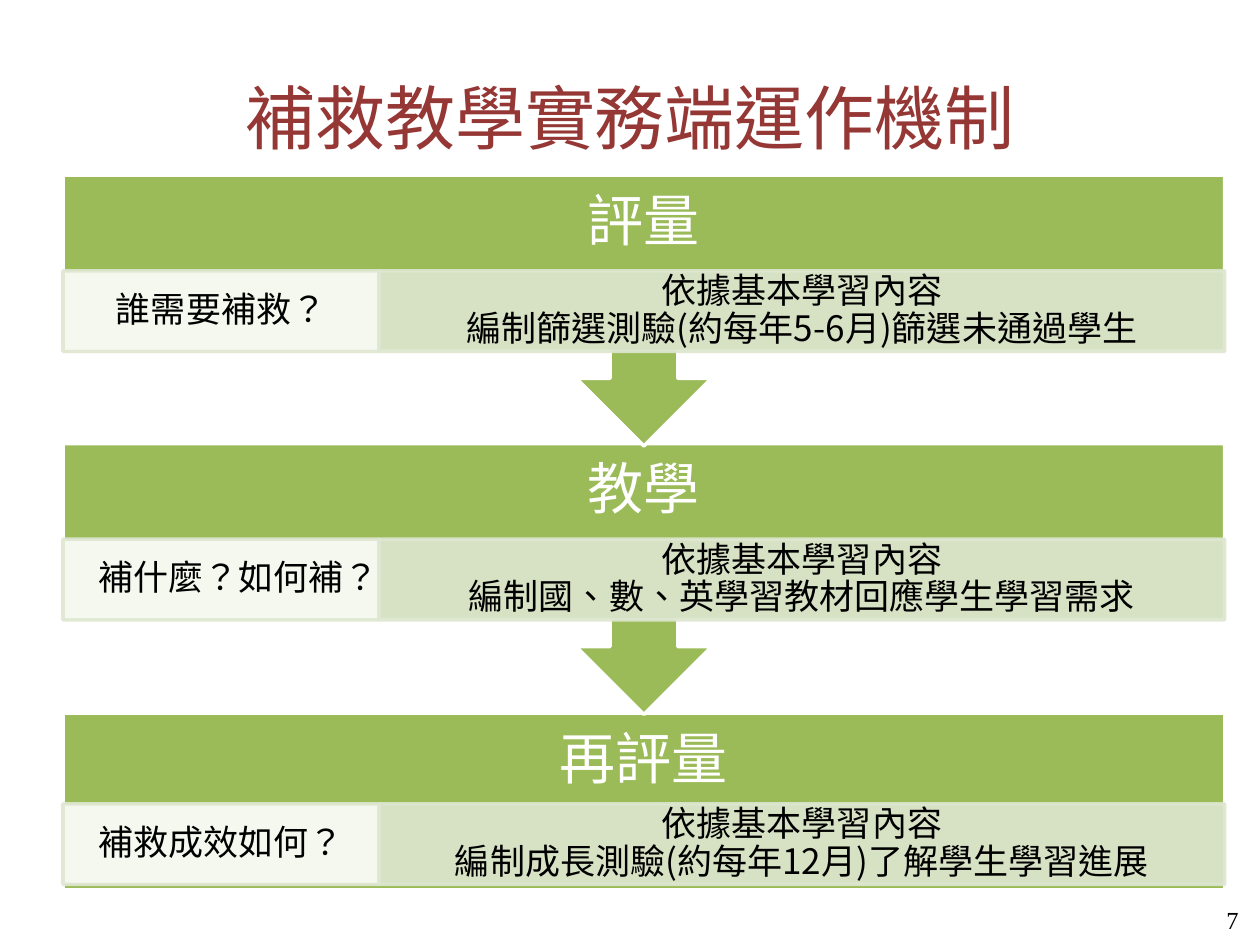
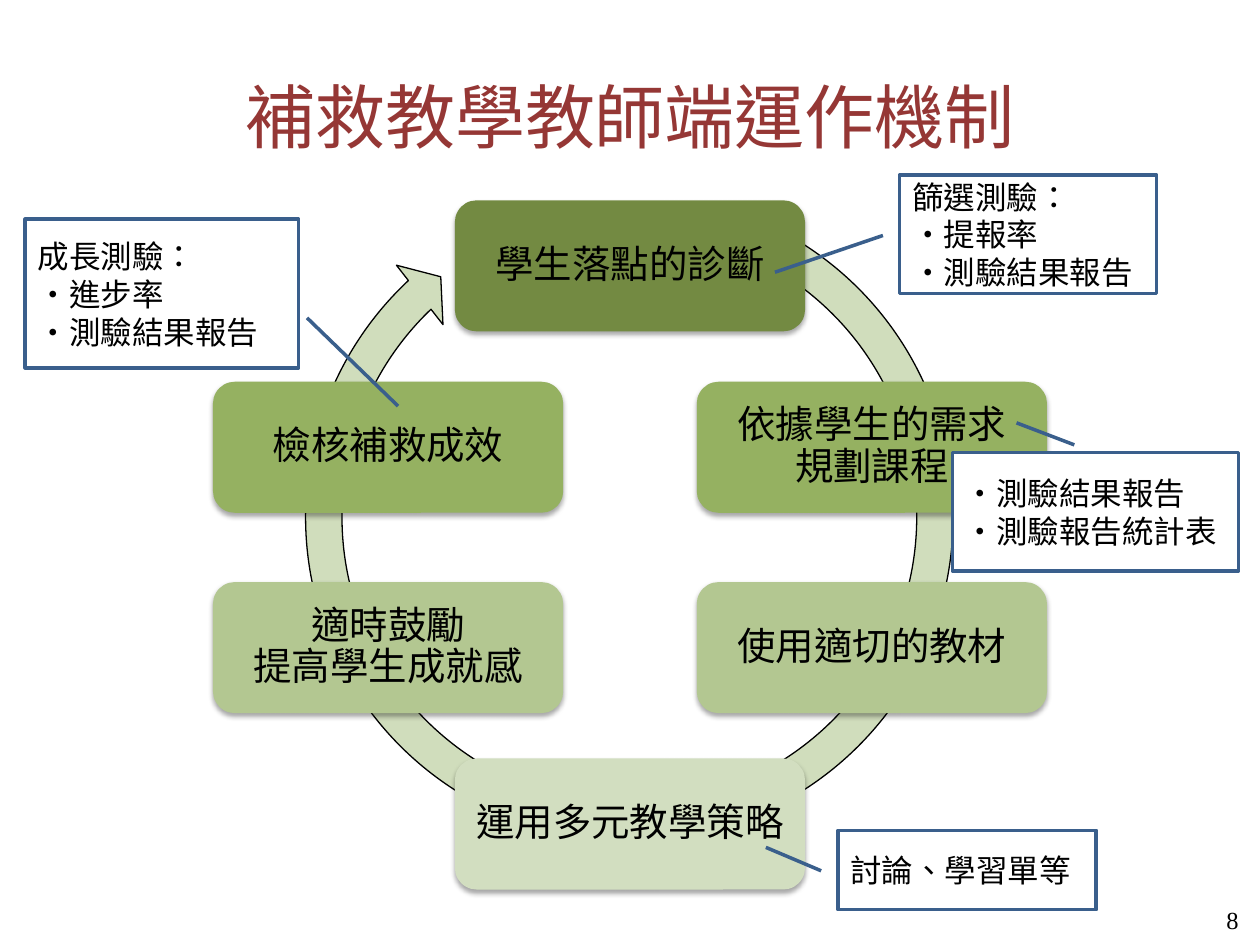
"""Build two slides on how remedial teaching works."""
from dataclasses import dataclass
from typing import NamedTuple, Optional

from lxml.etree import SubElement
from pptx import Presentation
from pptx.dml.color import RGBColor
from pptx.enum.shapes import MSO_SHAPE
from pptx.enum.text import MSO_ANCHOR, PP_ALIGN
from pptx.oxml.ns import qn
from pptx.util import Emu, Pt

EMU_PER_PX = 9144


@dataclass(frozen=True)
class Theme:
    """Colours, fonts and type sizes of the deck."""

    title: str = "953735"
    ink: str = "000000"
    paper: str = "FFFFFF"
    band: str = "9BBB59"
    tint: str = "DEE7D1"
    ring: str = "D0DDBC"
    note_line: str = "3A5F8C"
    cjk_font: str = "Noto Sans CJK SC"
    number_font: str = "Times New Roman"
    title_size: int = 40
    band_size: int = 32
    step_size: int = 22
    detail_size: int = 20
    note_size: int = 18
    number_size: int = 14


class Box(NamedTuple):
    """Left, top, width and height in px, 100 to the inch."""

    left: int
    top: int
    width: int
    height: int


class Style(NamedTuple):
    """How a block of text is set."""

    size: int
    color: str
    align: PP_ALIGN = PP_ALIGN.CENTER
    spacing: Optional[float] = None
    insets: Optional[tuple] = None
    font: str = Theme.cjk_font


class Stage(NamedTuple):
    """One stage of the practice flow."""

    top: int
    heading: str
    question: str
    answer: str
    detail_offset: int = 76
    leads_on: bool = True


class Step(NamedTuple):
    """One step of the teaching cycle."""

    column: int
    top: int
    color: str
    label: str


class Note(NamedTuple):
    """A callout and its leader line, as fractions of the box."""

    box: Box
    leader: tuple
    text: str


THEME = Theme()
BAND_TEXT = Style(THEME.band_size, THEME.paper, spacing=0.9, insets=(25, 25))
DETAIL_TEXT = Style(THEME.detail_size, THEME.ink, spacing=0.9, insets=(16, 3))
STEP_TEXT = Style(THEME.step_size, THEME.ink, spacing=0.9, insets=(9, 9))
NOTE_TEXT = Style(THEME.note_size, THEME.ink, PP_ALIGN.LEFT)
TITLE_TEXT = Style(THEME.title_size, THEME.title)
NUMBER_TEXT = Style(THEME.number_size, THEME.ink, PP_ALIGN.RIGHT, font=THEME.number_font)

FLOW_LEFT, QUESTION_WIDTH, ANSWER_WIDTH = 50, 251, 671
FLOW_WIDTH = QUESTION_WIDTH + ANSWER_WIDTH
HEADING_HEIGHT, DETAIL_HEIGHT = 76, 64
CALLOUT_HEIGHT, LAST_HEIGHT = 215, 140
STEP_WIDTH, STEP_HEIGHT = 278, 104
CYCLE_LEFT, COLUMN_PITCH = 361, 192

STAGES = (
    Stage(139, "評量", "誰需要補救？", "依據基本學習內容\n編制篩選測驗(約每年5-6月)篩選未通過學生"),
    Stage(352, "教學", "補什麼？如何補？", "依據基本學習內容\v編制國、數、英學習教材回應學生學習需求"),
    Stage(566, "再評量", "補救成效如何？",
          "依據基本學習內容\v編制成長測驗(約每年12月)了解學生學習進展", 72, False),
)
STEPS = (
    Step(0, 159, "738A42", "學生落點的診斷"),
    Step(1, 303, "95B161", "依據學生的需求\v規劃課程"),
    Step(1, 462, "B3C791", "使用適切的教材"),
    Step(0, 602, "D2DEC0", "運用多元教學策略"),
    Step(-1, 462, "B3C791", "適時鼓勵\v提高學生成就感"),
    Step(-1, 303, "95B161", "檢核補救成效"),
)
NOTES = (
    Note(Box(714, 139, 204, 94), (0.51, -0.065, 0.82, -0.485), "篩選測驗：\n‧提報率\n‧測驗結果報告"),
    Note(Box(20, 174, 217, 118), (0.663, 1.031, 1.257, 1.364), "成長測驗：\n‧進步率\n‧測驗結果報告"),
    Note(Box(665, 659, 205, 63), (0.51, -0.065, 0.215, -0.279), "討論、學習單等"),
    Note(Box(756, 359, 227, 94), (-0.063, 0.426, -0.249, 0.224), "‧測驗結果報告\n‧測驗報告統計表"),
)


def px(length: int) -> Emu:
    """Turn px into EMU."""
    return Emu(length * EMU_PER_PX)


def emu(box: Box) -> tuple:
    """Turn a box into EMU lengths."""
    return tuple(px(length) for length in box)


def write(frame, text: str, style: Style) -> None:
    """Set text in a frame, one paragraph a line."""
    frame.text = text
    frame.word_wrap = True
    frame.vertical_anchor = MSO_ANCHOR.MIDDLE
    if style.insets:
        frame.margin_left = frame.margin_right = px(style.insets[0])
        frame.margin_top = frame.margin_bottom = px(style.insets[1])
    for paragraph in frame.paragraphs:
        paragraph.alignment = style.align
        if style.spacing:
            paragraph.line_spacing = style.spacing
        font = paragraph.font
        font.size = Pt(style.size)
        font.color.rgb = RGBColor.from_string(style.color)
        font.name = style.font
        defaults = paragraph._p.pPr.find(qn("a:defRPr"))
        defaults.set("lang", "zh-TW")
        SubElement(defaults, qn("a:ea"), typeface=style.font)


def add_block(slide, preset: MSO_SHAPE, box: Box, fill: str,
              line: Optional[str] = None, weight: float = 2):
    """Add a flat preset shape, outlined if a line colour is given."""
    block = slide.shapes.add_shape(preset, *emu(box))
    block.shadow.inherit = False
    block.fill.solid()
    block.fill.fore_color.rgb = RGBColor.from_string(fill)
    if line:
        block.line.color.rgb = RGBColor.from_string(line)
        block.line.width = Pt(weight)
    else:
        block.line.fill.background()
    return block


def adjust(block, values: tuple) -> None:
    """Set the adjustments of a preset shape."""
    for index, value in enumerate(values):
        block.adjustments[index] = value


def add_text(slide, box: Box, text: str, style: Style) -> None:
    """Add a text box."""
    write(slide.shapes.add_textbox(*emu(box)).text_frame, text, style)


def add_detail(slide, box: Box, fill: str, text: str) -> None:
    """Add a slightly transparent cell under a stage heading."""
    cell = add_block(slide, MSO_SHAPE.RECTANGLE, box, fill, THEME.tint)
    for color in cell._element.spPr.iter(qn("a:srgbClr")):
        SubElement(color, qn("a:alpha"), val="90000")
    write(cell.text_frame, text, DETAIL_TEXT)


def add_stage(slide, stage: Stage) -> None:
    """Add a stage with its heading, question and answer."""
    preset = MSO_SHAPE.UP_ARROW_CALLOUT if stage.leads_on else MSO_SHAPE.RECTANGLE
    height = CALLOUT_HEIGHT if stage.leads_on else LAST_HEIGHT
    band = add_block(slide, preset, Box(FLOW_LEFT, stage.top, FLOW_WIDTH, height),
                     THEME.band, THEME.paper)
    band.rotation = 180 if stage.leads_on else 0
    add_text(slide, Box(FLOW_LEFT, stage.top, FLOW_WIDTH, HEADING_HEIGHT),
             stage.heading, BAND_TEXT)
    detail_top = stage.top + stage.detail_offset
    add_detail(slide, Box(FLOW_LEFT, detail_top, QUESTION_WIDTH, DETAIL_HEIGHT),
               THEME.paper, stage.question)
    add_detail(slide, Box(FLOW_LEFT + QUESTION_WIDTH, detail_top, ANSWER_WIDTH, DETAIL_HEIGHT),
               THEME.tint, stage.answer)


def add_step(slide, step: Step) -> None:
    """Add a step of the cycle with a soft shadow."""
    left = CYCLE_LEFT + step.column * COLUMN_PITCH
    block = add_block(slide, MSO_SHAPE.ROUNDED_RECTANGLE,
                      Box(left, step.top, STEP_WIDTH, STEP_HEIGHT), step.color)
    effects = block._element.spPr.find(qn("a:effectLst"))
    shadow = SubElement(effects, qn("a:outerShdw"), blurRad=str(Pt(3.1)), dist=str(Pt(1.8)),
                        dir="5400000", rotWithShape="0")
    color = SubElement(shadow, qn("a:srgbClr"), val=THEME.ink)
    SubElement(color, qn("a:alpha"), val="35000")
    write(block.text_frame, step.label, STEP_TEXT)


def add_note(slide, note: Note) -> None:
    """Add a callout with its leader line."""
    callout = add_block(slide, MSO_SHAPE.LINE_CALLOUT_1, note.box, THEME.paper, THEME.note_line)
    adjust(callout, note.leader)
    write(callout.text_frame, note.text, NOTE_TEXT)


def add_titled_slide(deck, title: str, title_top: int, number: int):
    """Add a slide with its title and page number."""
    slide = deck.slides.add_slide(deck.slide_layouts[5])
    heading = slide.shapes.title
    heading.left, heading.top, heading.width, heading.height = emu(Box(50, title_top, 900, 125))
    write(heading.text_frame, title, TITLE_TEXT)
    add_text(slide, Box(760, 710, 233, 40), str(number), NUMBER_TEXT)
    return slide


def build_practice_flow(deck) -> None:
    """Build the slide on the three stages in practice."""
    slide = add_titled_slide(deck, "補救教學實務端運作機制", 30, 7)
    for stage in reversed(STAGES):
        add_stage(slide, stage)


def build_teacher_cycle(deck) -> None:
    """Build the slide on the cycle of the teacher."""
    slide = add_titled_slide(deck, "補救教學教師端運作機制", 29, 8)
    ring = add_block(slide, MSO_SHAPE.CIRCULAR_ARROW, Box(227, 138, 545, 545),
                     THEME.ring, THEME.ink, 0.75)
    adjust(ring, (0.053, 3.126, 136.006, 175.048, 0.055))
    for step in STEPS:
        add_step(slide, step)
    for note in NOTES:
        add_note(slide, note)


def main() -> None:
    """Build and save the deck."""
    deck = Presentation()
    deck.slide_width, deck.slide_height = px(1000), px(750)
    build_practice_flow(deck)
    build_teacher_cycle(deck)
    deck.save("out.pptx")


if __name__ == "__main__":
    main()
